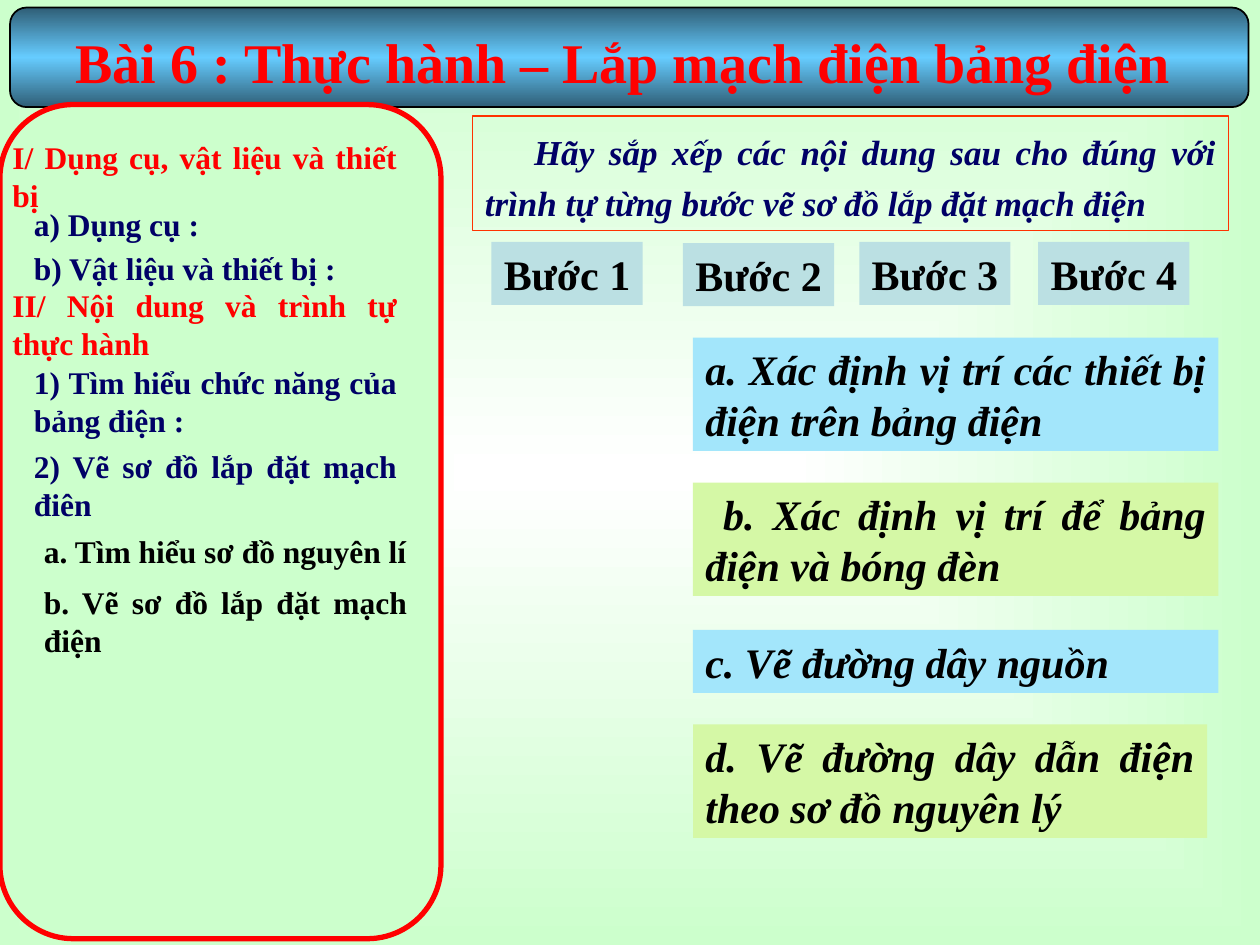
from lxml import etree
from pptx import Presentation
from pptx.dml.color import RGBColor
from pptx.enum.shapes import MSO_SHAPE as Shape
from pptx.enum.text import MSO_ANCHOR as Anchor, MSO_AUTO_SIZE as AutoSize, PP_ALIGN as Align
from pptx.oxml.ns import qn
from pptx.util import Inches, Pt

RED = RGBColor(0xFF, 0x00, 0x00)
ORANGE = RGBColor(0xFF, 0x33, 0x00)
NAVY = RGBColor(0x00, 0x00, 0x66)
BLACK = RGBColor(0x00, 0x00, 0x00)
WHITE = RGBColor(0xFF, 0xFF, 0xFF)
MINT = RGBColor(0xCC, 0xFF, 0xCC)
SKY = RGBColor(0x66, 0xCC, 0xFF)
SLATE = RGBColor(0x2F, 0x5E, 0x76)
PALE_BLUE = RGBColor(0xA3, 0xE6, 0xFB)
PALE_LIME = RGBColor(0xD5, 0xF8, 0xA6)
PALE_TEAL = RGBColor(0xBB, 0xE0, 0xE3)
FONT = "Times New Roman"

TITLE = "Bài 6 : Thực hành – Lắp mạch điện bảng điện"
PROMPT = "Hãy sắp xếp các nội dung sau cho đúng với trình tự từng bước vẽ sơ đồ lắp đặt mạch điện"
OUTLINE = [
    ("I/ Dụng cụ, vật liệu và thiết bị", RED, (0, 1.05, 3.25, 0.7), Align.JUSTIFY),
    ("a) Dụng cụ :", NAVY, (0.17, 1.58, 2.17, 0.4), Align.LEFT),
    ("b) Vật liệu và thiết bị :", NAVY, (0.17, 1.93, 2.67, 0.4), Align.LEFT),
    ("II/ Nội dung và trình tự thực hành", RED, (0, 2.22, 3.25, 0.7), Align.JUSTIFY),
    ("1) Tìm hiểu chức năng của bảng điện :", NAVY, (0.17, 2.83, 3.08, 0.7), Align.JUSTIFY),
    ("2) Vẽ sơ đồ lắp đặt mạch điên", NAVY, (0.17, 3.5, 3.08, 0.7), Align.JUSTIFY),
    ("a. Tìm hiểu sơ đồ nguyên lí", BLACK, (0.25, 4.17, 3.25, 0.4), Align.JUSTIFY),
    ("b. Vẽ sơ đồ lắp đặt mạch điện", BLACK, (0.25, 4.58, 3.08, 0.7), Align.JUSTIFY),
]
CHOICES = [
    ("c. Vẽ đường dây nguồn", PALE_BLUE, (5.5, 5, 4.17, 0.5), 0),
    ("b. Xác định vị trí để bảng điện và bóng đèn", PALE_LIME, (5.5, 3.83, 4.17, 0.9), 0.14),
    ("a. Xác định vị trí các thiết bị điện trên bảng điện", PALE_BLUE, (5.5, 2.68, 4.17, 0.9), 0),
    ("d. Vẽ đường dây dẫn điện theo sơ đồ nguyên lý", PALE_LIME, (5.5, 5.75, 4.08, 0.9), 0),
]
STEPS = [(3.9, 1.92), (5.42, 1.93), (6.82, 1.92), (8.24, 1.92)]


def inches(area):
    return [Inches(value) for value in area]


def set_gradient(gradient, stops, direction, **options):
    for child in list(gradient):
        gradient.remove(child)
    stop_list = etree.SubElement(gradient, qn("a:gsLst"))
    for position, color in stops:
        stop = etree.SubElement(stop_list, qn("a:gs"), pos=str(position * 1000))
        etree.SubElement(stop, qn("a:srgbClr"), val=str(color))
    return etree.SubElement(gradient, qn(direction), **options)


def add_panel(page, kind, area, fill=None, line=None, width=1):
    panel = page.shapes.add_shape(kind, *inches(area))
    panel.shadow.inherit = False
    if fill is None:
        panel.fill.background()
    else:
        panel.fill.solid()
        panel.fill.fore_color.rgb = fill
    if line is None:
        panel.line.fill.background()
    else:
        panel.line.color.rgb = line
        panel.line.width = Pt(width)
    return panel


def write(box, text, size, color, align=Align.LEFT, italic=False, indent=0,
          spacing=None, auto_size=AutoSize.SHAPE_TO_FIT_TEXT):
    frame = box.text_frame
    for name, value in {"word_wrap": True, "auto_size": auto_size,
                        "vertical_anchor": Anchor.TOP}.items():
        setattr(frame, name, value)
    para = frame.paragraphs[0]
    para.alignment = align
    if spacing:
        para.line_spacing = spacing
    if indent:
        para._p.get_or_add_pPr().set("indent", str(Inches(indent)))
    span = para.add_run()
    span.text = text
    for name, value in {"name": FONT, "size": Pt(size), "bold": True, "italic": italic}.items():
        setattr(span.font, name, value)
    span.font.color.rgb = color


def main():
    deck = Presentation()
    deck.slide_width, deck.slide_height = Inches(10), Inches(7.5)
    page = deck.slides.add_slide(deck.slide_layouts[5])

    page.background.fill.gradient()
    backdrop = page.element.find(".//" + qn("a:gradFill"))
    glow = set_gradient(backdrop, [(0, WHITE), (100, MINT)], "a:path", path="shape")
    etree.SubElement(glow, qn("a:fillToRect"), **dict.fromkeys("ltrb", "50000"))

    banner = add_panel(page, Shape.ROUNDED_RECTANGLE, (0.08, 0.06, 9.83, 0.79), SKY, BLACK)
    banner.fill.gradient()
    set_gradient(banner.element.spPr.find(qn("a:gradFill")),
                 [(0, SLATE), (50, SKY), (100, SLATE)],
                 "a:lin", ang="5400000", scaled="1")
    add_panel(page, Shape.ROUNDED_RECTANGLE, (0, 0.83, 3.5, 6.62), MINT, RED, 3)

    title = page.shapes.title
    title.left, title.top, title.width, title.height = inches((0.17, 0.17, 9.83, 0.63))
    title.text_frame.margin_left = Inches(0.43)
    write(title, TITLE, 32, RED, auto_size=AutoSize.NONE)
    title.element.getparent().append(title.element)

    for text, color, area, align in OUTLINE:
        write(page.shapes.add_textbox(*inches(area)), text, 18, color, align)

    for text, fill, area, indent in CHOICES:
        choice = add_panel(page, Shape.RECTANGLE, area, fill)
        write(choice, text, 24, BLACK, Align.JUSTIFY, italic=True, indent=indent)

    for number, (left, top) in enumerate(STEPS, 1):
        step = add_panel(page, Shape.RECTANGLE, (left, top, 1.2, 0.5), PALE_TEAL)
        step.text_frame.margin_right = 0
        write(step, f"Bước {number}", 24, BLACK)

    prompt = add_panel(page, Shape.RECTANGLE, (3.75, 0.92, 6, 0.91), line=ORANGE, width=0.75)
    write(prompt, PROMPT, 20, NAVY, Align.JUSTIFY, italic=True, indent=0.39, spacing=Pt(29))

    deck.save("out.pptx")


if __name__ == "__main__":
    main()
